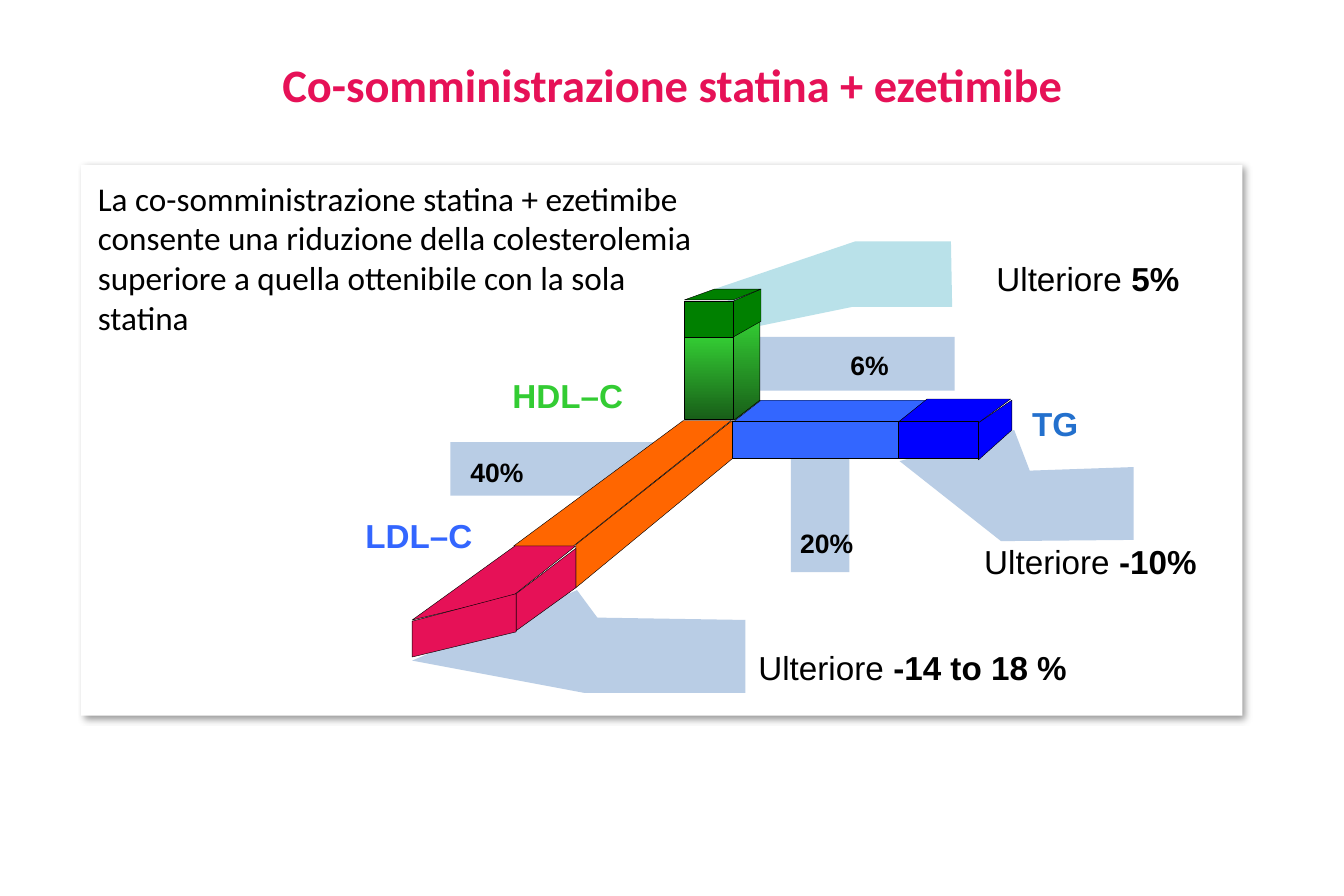
from collections import namedtuple
from dataclasses import dataclass

from lxml import etree
from pptx import Presentation
from pptx.dml.color import RGBColor as RGB
from pptx.enum.shapes import MSO_SHAPE as SHAPE
from pptx.enum.text import MSO_ANCHOR as ANCHOR, PP_ALIGN as ALIGN
from pptx.oxml.ns import qn
from pptx.util import Pt

PX = 9144  # 100 px to the inch
Box = namedtuple("Box", "left top width height")


@dataclass(frozen=True)
class Theme:
    white: str = "FFFFFF"
    black: str = "000000"
    crimson: str = "E61157"
    strip: str = "B9CDE5"
    aqua: str = "B9E1E9"
    green: str = "008000"
    lime: str = "33CC33"
    lime_shade: str = "185E18"
    orange: str = "FF6600"
    blue: str = "3366FF"
    deep_blue: str = "0000FF"
    tg_blue: str = "2370CD"
    heading_font: str = "Calibri"
    chart_font: str = "Arial"
    title_size: int = 28
    body_size: int = 20
    value_size: int = 16
    edge: float = 0.25


THEME = Theme()
LIME_FADE = (THEME.lime, THEME.lime_shade)


def within(box, left, top, width, height):
    return Box(box.left + left, box.top + top, width, height)


def emu(box):
    return [PX * length for length in box]


def paint(shape, fill, outlined):
    """Fill with one colour, or fade downwards through a pair of colours."""
    shape.shadow.inherit = False
    if isinstance(fill, tuple):
        shape.fill.gradient()
        shape.fill.gradient_angle = 270
        for stop, colour in zip(shape.fill.gradient_stops, fill):
            stop.color.rgb = RGB.from_string(colour)
    else:
        shape.fill.solid()
        shape.fill.fore_color.rgb = RGB.from_string(fill)
    if outlined:
        shape.line.color.rgb = RGB.from_string(THEME.black)
        shape.line.width = Pt(THEME.edge)
    else:
        shape.line.fill.background()


def add_block(slide, box, fill, outlined=True):
    block = slide.shapes.add_shape(SHAPE.RECTANGLE, *emu(box))
    paint(block, fill, outlined)
    return block


def add_face(slide, box, corners, fill, outlined=True):
    """Draw a closed outline whose corners are measured from the box."""
    outline = slide.shapes.build_freeform(*corners[0], scale=PX)
    outline.add_line_segments(corners[1:], close=True)
    paint(outline.convert_to_shape(PX * box.left, PX * box.top), fill, outlined)


def add_text(slide, box, runs, size, font, colour=THEME.black,
             align=ALIGN.LEFT, spacing=None, inset_top=5):
    """Write (words, bold) runs in one paragraph."""
    frame = slide.shapes.add_textbox(*emu(box)).text_frame
    paragraph = frame.paragraphs[0]
    frame_format = dict(word_wrap=True, vertical_anchor=ANCHOR.TOP,
                        margin_left=10 * PX, margin_right=10 * PX,
                        margin_top=inset_top * PX, margin_bottom=0)
    paragraph_format = dict(alignment=align, line_spacing=spacing)
    formats = [(frame, frame_format), (paragraph, paragraph_format)]
    for words, bold in runs:
        run = paragraph.add_run()
        run.text = words
        run.font.color.rgb = RGB.from_string(colour)
        formats.append((run.font, dict(name=font, size=Pt(size), bold=bold)))
    for target, values in formats:
        for name, value in values.items():
            setattr(target, name, value)


def add_title(slide, box):
    add_text(slide, box, [("Co-somministrazione statina + ezetimibe", True)],
             THEME.title_size, THEME.heading_font, THEME.crimson, ALIGN.CENTER, 0.9)


def add_panel(slide, box):
    panel = add_block(slide, box, THEME.white, outlined=False)
    effects = panel._element.spPr.find(qn("a:effectLst"))
    shadow = etree.SubElement(effects, qn("a:outerShdw"), blurRad=str(Pt(4)),
                              dist=str(Pt(3)), dir="2700000", algn="tl", rotWithShape="0")
    tint = etree.SubElement(shadow, qn("a:srgbClr"), val=THEME.black)
    etree.SubElement(tint, qn("a:alpha"), val="40000")
    message = ("La co-somministrazione statina + ezetimibe consente una riduzione "
               "della colesterolemia superiore a quella ottenibile con la sola statina")
    add_text(slide, within(box, 4, 6, 518, 195), [(message, False)],
             THEME.body_size, THEME.heading_font)


def add_strips(slide, box):
    """Pale bands behind the bars that lead to the figures."""
    for band in ((366, 149, 49, 128), (308, 80, 195, 45), (81, 168, 195, 45)):
        add_block(slide, within(box, *band), THEME.strip, outlined=False)
    callouts = (
        (THEME.aqua, [(302, 40), (339, 71), (417, 55), (501, 55), (500, 0), (420, 0)]),
        (THEME.strip, [(553, 158), (457, 184), (542, 251), (653, 250), (653, 189), (566, 192)]),
        (THEME.strip, [(187, 292), (49, 351), (193, 378), (328, 378), (328, 317), (204, 315)]),
    )
    for fill, corners in callouts:
        add_face(slide, box, corners, fill, outlined=False)


def add_bar(slide, box, faces, fronts=()):
    for fill, corners in faces:
        add_face(slide, box, corners, fill)
    for fill, front in fronts:
        add_block(slide, within(box, *front), fill)


def add_bars(slide, box):
    add_bar(slide, box, faces=(
        (LIME_FADE, [(318, 150), (318, 78), (340, 66), (340, 133)]),
        (THEME.green, [(318, 80), (318, 50), (341, 40), (341, 67)]),
        (THEME.green, [(341, 40), (302, 40), (277, 49), (318, 49)]),
    ), fronts=(
        (LIME_FADE, (277, 80, 41, 69)),
        (THEME.green, (277, 50, 41, 30)),
    ))
    add_bar(slide, box, faces=(
        (THEME.orange, [(316, 150), (276, 150), (134, 255), (184, 255)]),
        (THEME.orange, [(317, 182), (317, 150), (186, 254), (186, 290)]),
        (THEME.crimson, [(186, 290), (186, 257), (136, 295), (136, 326)]),
        (THEME.crimson, [(186, 255), (135, 255), (49, 317), (133, 297)]),
        (THEME.crimson, [(49, 318), (49, 348), (136, 327), (136, 295)]),
    ))
    add_bar(slide, box, faces=(
        (THEME.blue, [(318, 151), (341, 133), (480, 133), (455, 152)]),
        (THEME.deep_blue, [(454, 153), (480, 132), (550, 132), (523, 152)]),
        (THEME.deep_blue, [(523, 183), (523, 152), (551, 133), (551, 158)]),
    ), fronts=(
        (THEME.blue, (317, 151, 141, 31)),
        (THEME.deep_blue, (456, 151, 67, 31)),
    ))


def add_labels(slide, box):
    for lipid, colour, left, top, width in (("HDL–C", THEME.lime, 123, 105, 183),
                                            ("LDL–C", THEME.blue, 0, 222, 183),
                                            ("TG", THEME.tg_blue, 558, 129, 78)):
        add_text(slide, within(box, left, top, width, 36), [(lipid, True)],
                 THEME.body_size, THEME.chart_font, colour, inset_top=7)
    for gain, left, top, width, align in (("-14 to 18 %", 329, 333, 327, ALIGN.LEFT),
                                          ("-10%", 518, 244, 215, ALIGN.LEFT),
                                          ("5%", 509, 7, 192, ALIGN.RIGHT)):
        add_text(slide, within(box, left, top, width, 36),
                 [("Ulteriore ", False), (gain, True)],
                 THEME.body_size, THEME.chart_font, align=align, inset_top=7)
    for effect, left, top in (("40%", 88, 174), ("6%", 406, 84), ("20%", 364, 233)):
        add_text(slide, within(box, left, top, 107, 30), [(effect, True)],
                 THEME.value_size, THEME.chart_font, inset_top=6)


def main():
    deck = Presentation()
    deck.slide_width, deck.slide_height = 1125 * PX, 750 * PX
    slide = deck.slides.add_slide(deck.slide_layouts[6])
    chart = Box(296, 202, 733, 379)
    add_panel(slide, Box(68, 138, 972, 461))
    for add_part in (add_strips, add_bars, add_labels):
        add_part(slide, chart)
    add_title(slide, Box(0, 47, 1125, 53))
    deck.save("out.pptx")


if __name__ == "__main__":
    main()
